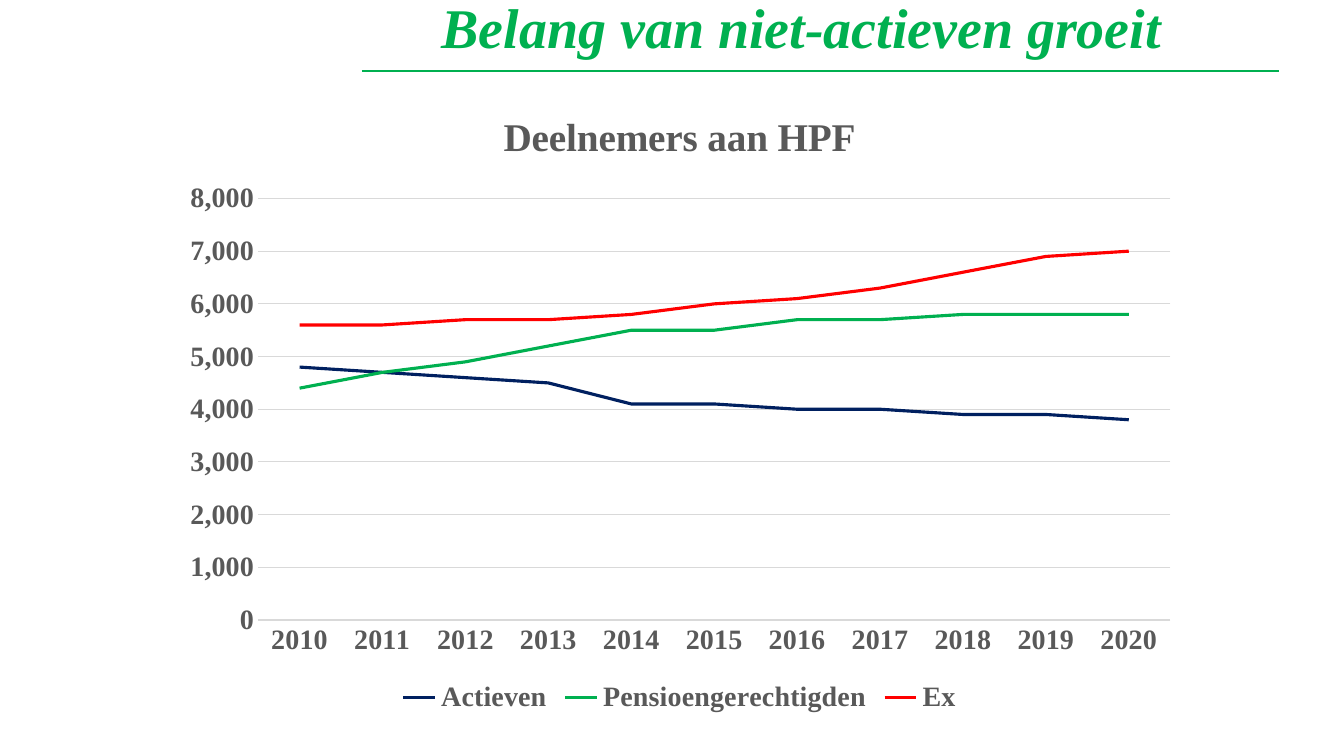
from dataclasses import dataclass

from lxml.etree import SubElement
from pptx import Presentation
from pptx.chart.data import CategoryChartData
from pptx.dml.color import RGBColor
from pptx.enum.chart import XL_CHART_TYPE, XL_LEGEND_POSITION, XL_MARKER_STYLE, XL_TICK_MARK
from pptx.enum.shapes import MSO_CONNECTOR
from pptx.enum.text import MSO_ANCHOR, MSO_AUTO_SIZE, PP_ALIGN
from pptx.oxml import parse_xml
from pptx.oxml.ns import nsdecls, qn
from pptx.util import Inches, Pt


@dataclass(frozen=True)
class Theme:
    font: str = "Times New Roman"
    green: str = "00B050"
    navy: str = "002060"
    red: str = "FF0000"
    text: str = "595959"
    grid: str = "D9D9D9"
    title_size: int = 40
    chart_title_size: int = 28
    label_size: int = 20


THEME = Theme()
WIDTH, HEIGHT = 13.33, 7.5
TITLE_BOX = (4.28, -0.12, 7.53, 0.77)
RULE_BOX = (3.59, 0.7, 9.1, 0)
CHART_BOX = (1.68, 0.86, 10.12, 6.27)
PLOT_SHARES = {"x": 0.087, "y": 0.177, "w": 0.894, "h": 0.667}
YEARS = [str(year) for year in range(2010, 2021)]
PARTICIPANTS = {
    "Actieven": (THEME.navy, [4800, 4700, 4600, 4500, 4100, 4100, 4000, 4000, 3900, 3900, 3800]),
    "Pensioengerechtigden": (THEME.green, [4400, 4700, 4900, 5200, 5500, 5500, 5700, 5700, 5800, 5800, 5800]),
    "Ex": (THEME.red, [5600, 5600, 5700, 5700, 5800, 6000, 6100, 6300, 6600, 6900, 7000]),
}


def style_font(font, size, color):
    font.name = THEME.font
    font.size = Pt(size)
    font.bold = True
    font.color.rgb = RGBColor.from_string(color)


def style_line(line, color, width):
    line.color.rgb = RGBColor.from_string(color)
    line.width = Pt(width)


def add_title(slide, box, text):
    title = slide.shapes.title
    title.left, title.top, title.width, title.height = map(Inches, box)
    frame = title.text_frame
    frame.word_wrap = True
    frame.auto_size = MSO_AUTO_SIZE.SHAPE_TO_FIT_TEXT
    frame.vertical_anchor = MSO_ANCHOR.TOP
    paragraph = frame.paragraphs[0]
    paragraph.alignment = PP_ALIGN.LEFT
    run = paragraph.add_run()
    run.text = text
    style_font(run.font, THEME.title_size, THEME.green)
    run.font.italic = True


def add_rule(slide, box):
    left, top, width, height = map(Inches, box)
    rule = slide.shapes.add_connector(MSO_CONNECTOR.STRAIGHT, left, top, left + width, top + height)
    style_line(rule.line, THEME.green, 1.5)
    SubElement(rule._element.spPr, qn("a:effectLst"))


def set_plot_layout(chart, shares):
    plot_area = chart.element.find(".//" + qn("c:plotArea"))
    previous = plot_area.find(qn("c:layout"))
    if previous is not None:
        plot_area.remove(previous)
    settings = {"layoutTarget": "inner", "xMode": "edge", "yMode": "edge", **shares}
    items = "".join(f'<c:{name} val="{value}"/>' for name, value in settings.items())
    layout = f'<c:layout {nsdecls("c")}><c:manualLayout>{items}</c:manualLayout></c:layout>'
    plot_area.insert(0, parse_xml(layout))


def style_axes(chart):
    for axis in (chart.category_axis, chart.value_axis):
        axis.major_tick_mark = axis.minor_tick_mark = XL_TICK_MARK.NONE
        style_font(axis.tick_labels.font, THEME.label_size, THEME.text)
    style_line(chart.category_axis.format.line, THEME.grid, 0.75)
    value_axis = chart.value_axis
    value_axis.minimum_scale, value_axis.maximum_scale = 0, 8000
    value_axis.major_unit = 1000
    value_axis.format.line.fill.background()
    value_axis.has_major_gridlines = True
    style_line(value_axis.major_gridlines.format.line, THEME.grid, 0.75)
    value_axis.tick_labels.number_format = "#,##0"
    value_axis.tick_labels.number_format_is_linked = False


def add_participants_chart(slide, box, heading):
    data = CategoryChartData(number_format="#,##0")
    data.categories = YEARS
    for name, (_, values) in PARTICIPANTS.items():
        data.add_series(name, values)
    chart = slide.shapes.add_chart(XL_CHART_TYPE.LINE, *map(Inches, box), data).chart
    style_font(chart.font, THEME.label_size, THEME.text)
    chart.has_title = True
    run = chart.chart_title.text_frame.paragraphs[0].add_run()
    run.text = heading
    style_font(run.font, THEME.chart_title_size, THEME.text)
    chart.chart_title.include_in_layout = False
    chart.has_legend = True
    chart.legend.position = XL_LEGEND_POSITION.BOTTOM
    chart.legend.include_in_layout = False
    style_font(chart.legend.font, THEME.label_size, THEME.text)
    style_axes(chart)
    plot = chart.plots[0]
    plot.vary_by_categories = False
    for series, (color, _) in zip(plot.series, PARTICIPANTS.values()):
        series.smooth = False
        series.marker.style = XL_MARKER_STYLE.NONE
        style_line(series.format.line, color, 2.25)
    set_plot_layout(chart, PLOT_SHARES)


def main():
    presentation = Presentation()
    presentation.slide_width, presentation.slide_height = Inches(WIDTH), Inches(HEIGHT)
    slide = presentation.slides.add_slide(presentation.slide_layouts.get_by_name("Title Only"))
    add_rule(slide, RULE_BOX)
    add_title(slide, TITLE_BOX, "Belang van niet-actieven groeit")
    add_participants_chart(slide, CHART_BOX, "Deelnemers aan HPF")
    presentation.save("out.pptx")


if __name__ == "__main__":
    main()
